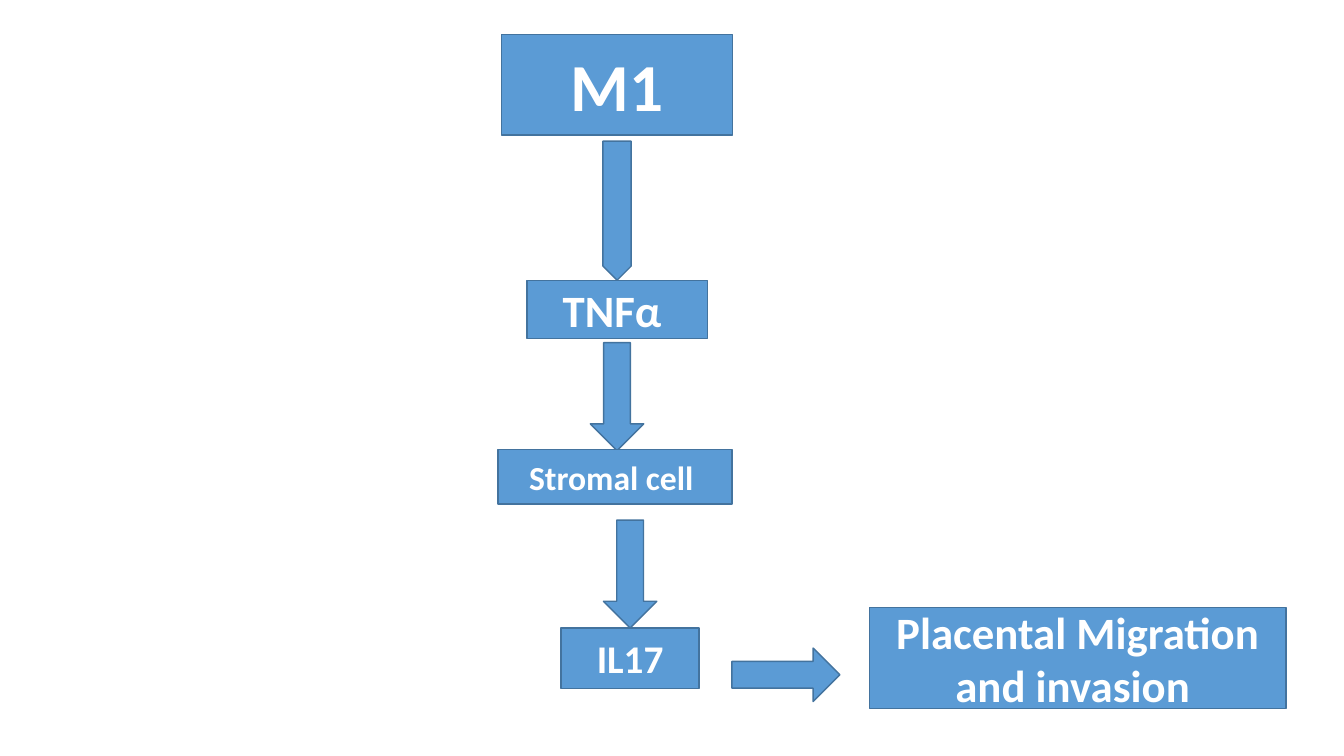
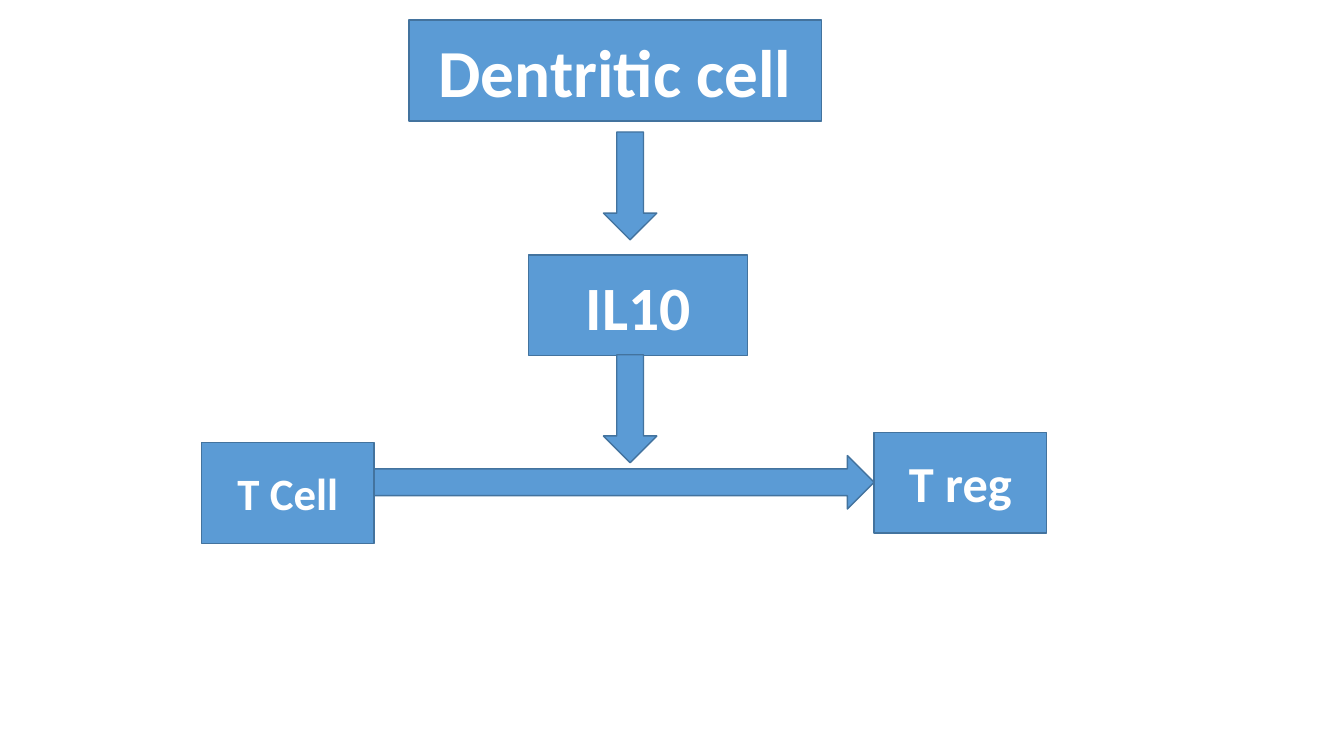
from pptx import Presentation
from pptx.dml.color import RGBColor
from pptx.enum.shapes import MSO_SHAPE
from pptx.enum.text import MSO_ANCHOR, PP_ALIGN
from pptx.util import Inches, Pt

RECTANGLE = MSO_SHAPE.RECTANGLE
DOWN_ARROW = MSO_SHAPE.DOWN_ARROW
RIGHT_ARROW = MSO_SHAPE.RIGHT_ARROW
CENTER = PP_ALIGN.CENTER
MIDDLE = MSO_ANCHOR.MIDDLE

FONT = "Calibri"
FILL, OUTLINE, TEXT = "5B9BD5", "43739E", "FFFFFF"
BLANK_LAYOUT = 6

# Lengths in inches; shapes in a column are centred on its axis.
SLIDE_WIDTH, SLIDE_HEIGHT = 13.33, 7.5
LEFT_AXIS, RIGHT_AXIS = 6.12, 6.25
BOX_HEIGHT = 1
ARROW_LENGTH, ARROW_BREADTH = 1.07, 0.53


def color(hex_code):
    return RGBColor.from_string(hex_code)


def add_styled_shape(slide, kind, left, top, width, height):
    shape = slide.shapes.add_shape(
        kind, Inches(left), Inches(top), Inches(width), Inches(height))
    shape.shadow.inherit = False
    shape.fill.solid()
    shape.fill.fore_color.rgb = color(FILL)
    shape.line.color.rgb = color(OUTLINE)
    shape.line.width = Pt(1)
    return shape


def add_box(slide, text, size, axis, top, width, height=BOX_HEIGHT):
    """Add a labelled box centred horizontally on axis."""
    box = add_styled_shape(slide, RECTANGLE, axis - width / 2, top, width, height)
    frame = box.text_frame
    frame.word_wrap = True
    frame.vertical_anchor = MIDDLE
    paragraph = frame.paragraphs[0]
    paragraph.text = text
    paragraph.alignment = CENTER
    paragraph.font.name = FONT
    paragraph.font.size = Pt(size)
    paragraph.font.bold = True
    paragraph.font.color.rgb = color(TEXT)


def add_down_arrow(slide, axis, top, length=ARROW_LENGTH, breadth=ARROW_BREADTH):
    return add_styled_shape(
        slide, DOWN_ARROW, axis - breadth / 2, top, breadth, length)


def add_right_arrow(slide, left, top, length=ARROW_LENGTH):
    add_styled_shape(slide, RIGHT_ARROW, left, top, length, ARROW_BREADTH)


def add_slide(presentation):
    return presentation.slides.add_slide(presentation.slide_layouts[BLANK_LAYOUT])


def build_migration_slide(presentation):
    slide = add_slide(presentation)
    full_shaft_arrow = add_down_arrow(slide, LEFT_AXIS, 1.4, 1.38, 0.28)
    full_shaft_arrow.adjustments[0] = 1
    add_down_arrow(slide, LEFT_AXIS, 3.4)
    add_down_arrow(slide, RIGHT_AXIS, 5.16)
    add_right_arrow(slide, 7.26, 6.43)

    add_box(slide, "M1", 48, LEFT_AXIS, 0.34, 2.29)
    add_box(slide, "TNFα ", 32, LEFT_AXIS, 2.78, 1.79, 0.58)
    add_box(slide, "Stromal cell ", 24, 6.1, 4.46, 2.32, 0.54)
    add_box(slide, "IL17", 28, RIGHT_AXIS, 6.23, 1.37, 0.6)
    add_box(slide, "Placental Migration and invasion ", 32, 10.69, 6.03, 4.13)


def build_regulation_slide(presentation):
    slide = add_slide(presentation)
    cell_width = 1.71
    cell_left, regulator_left = 2, 8.67
    cell_right = cell_left + cell_width

    add_right_arrow(slide, cell_right, 4.52, regulator_left - cell_right)
    add_box(slide, "Dentritic cell", 48, 6.1, 0.2, 4.09)
    add_box(slide, "IL10", 44, 6.33, 2.53, 2.17)
    add_box(slide, "T Cell", 32, cell_left + cell_width / 2, 4.39, cell_width)
    add_box(slide, "T reg", 36, regulator_left + cell_width / 2, 4.29, cell_width)
    for top in (1.31, 3.52):
        add_down_arrow(slide, RIGHT_AXIS, top)


def main():
    presentation = Presentation()
    presentation.slide_width = Inches(SLIDE_WIDTH)
    presentation.slide_height = Inches(SLIDE_HEIGHT)
    build_migration_slide(presentation)
    build_regulation_slide(presentation)
    presentation.save("out.pptx")


if __name__ == "__main__":
    main()
